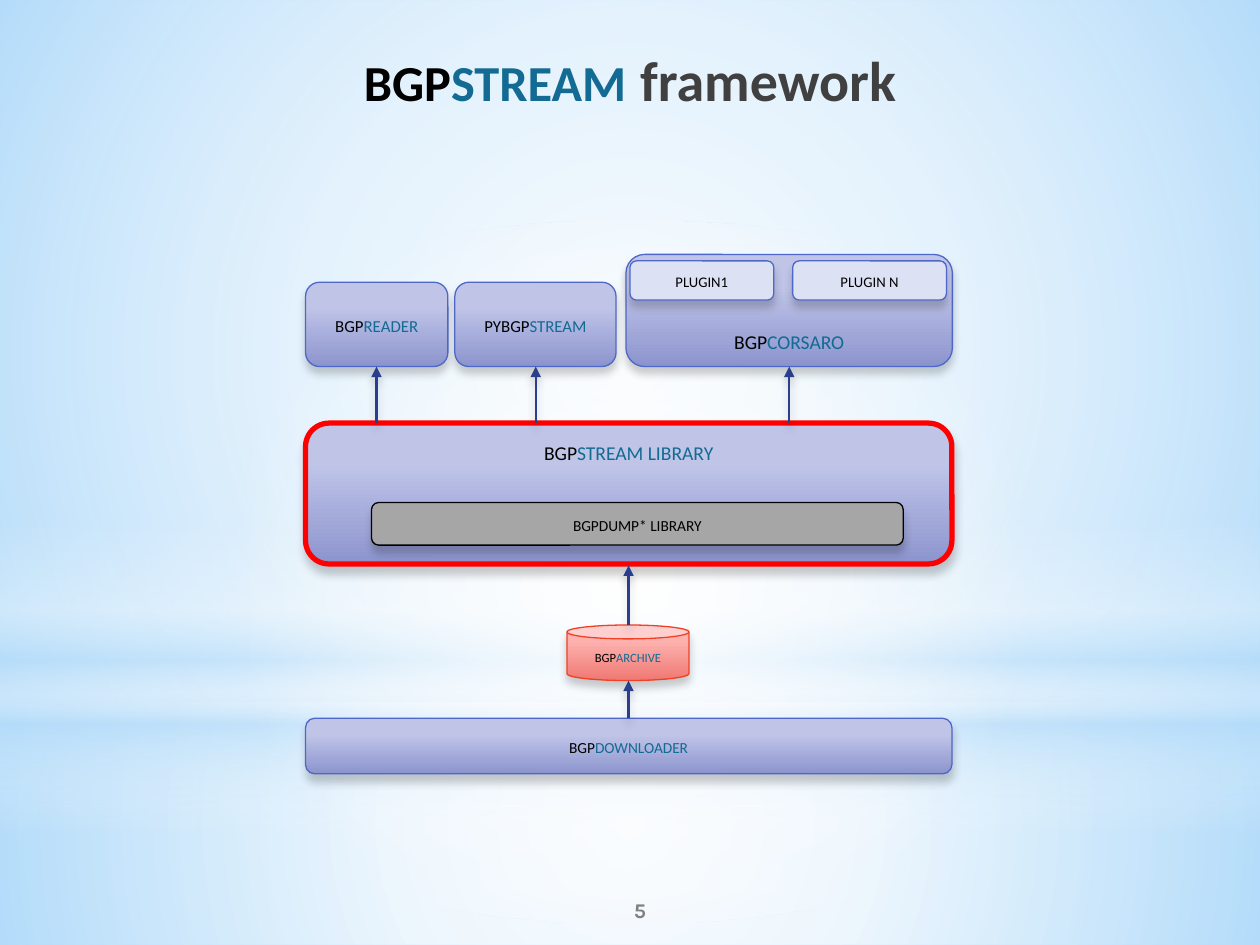
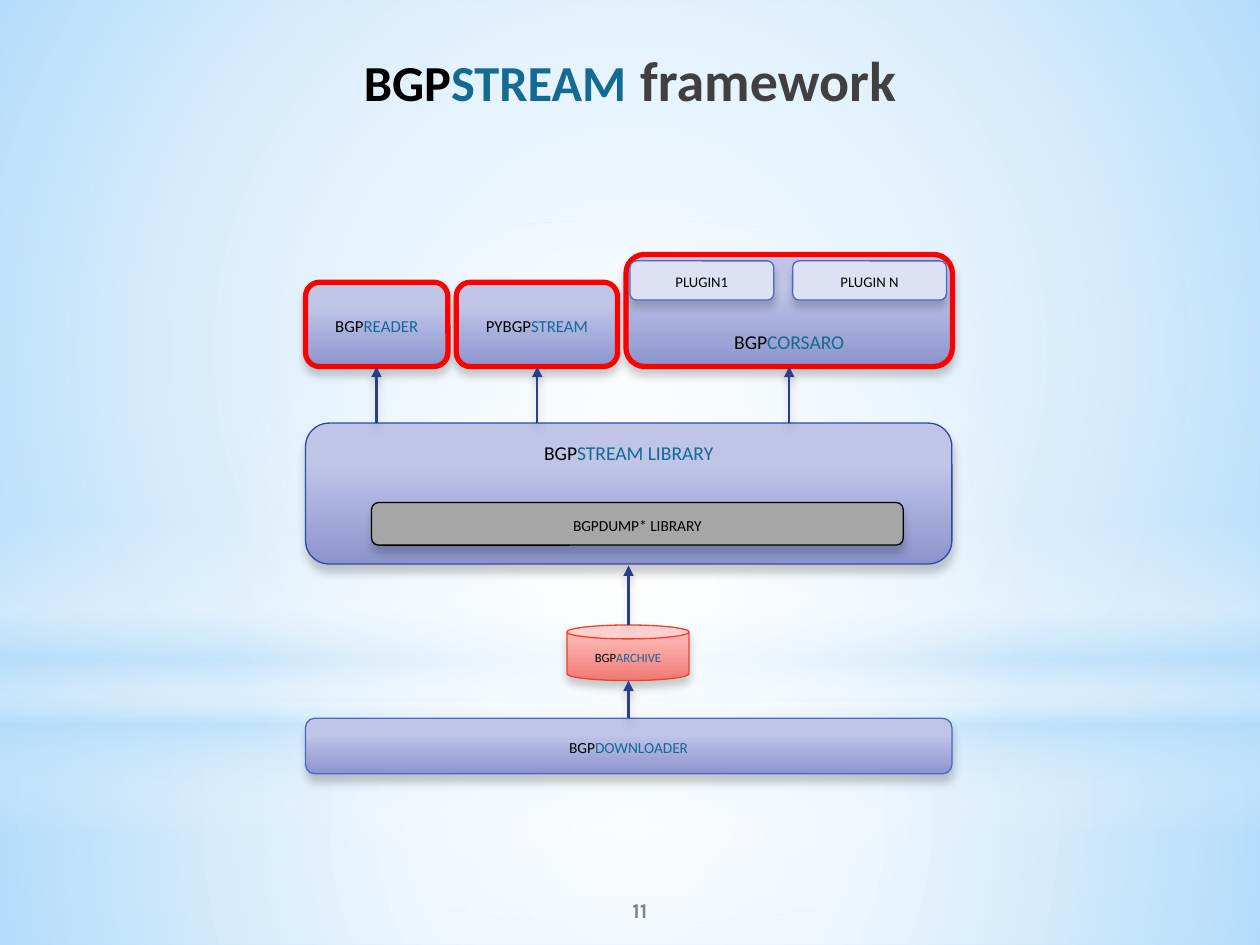
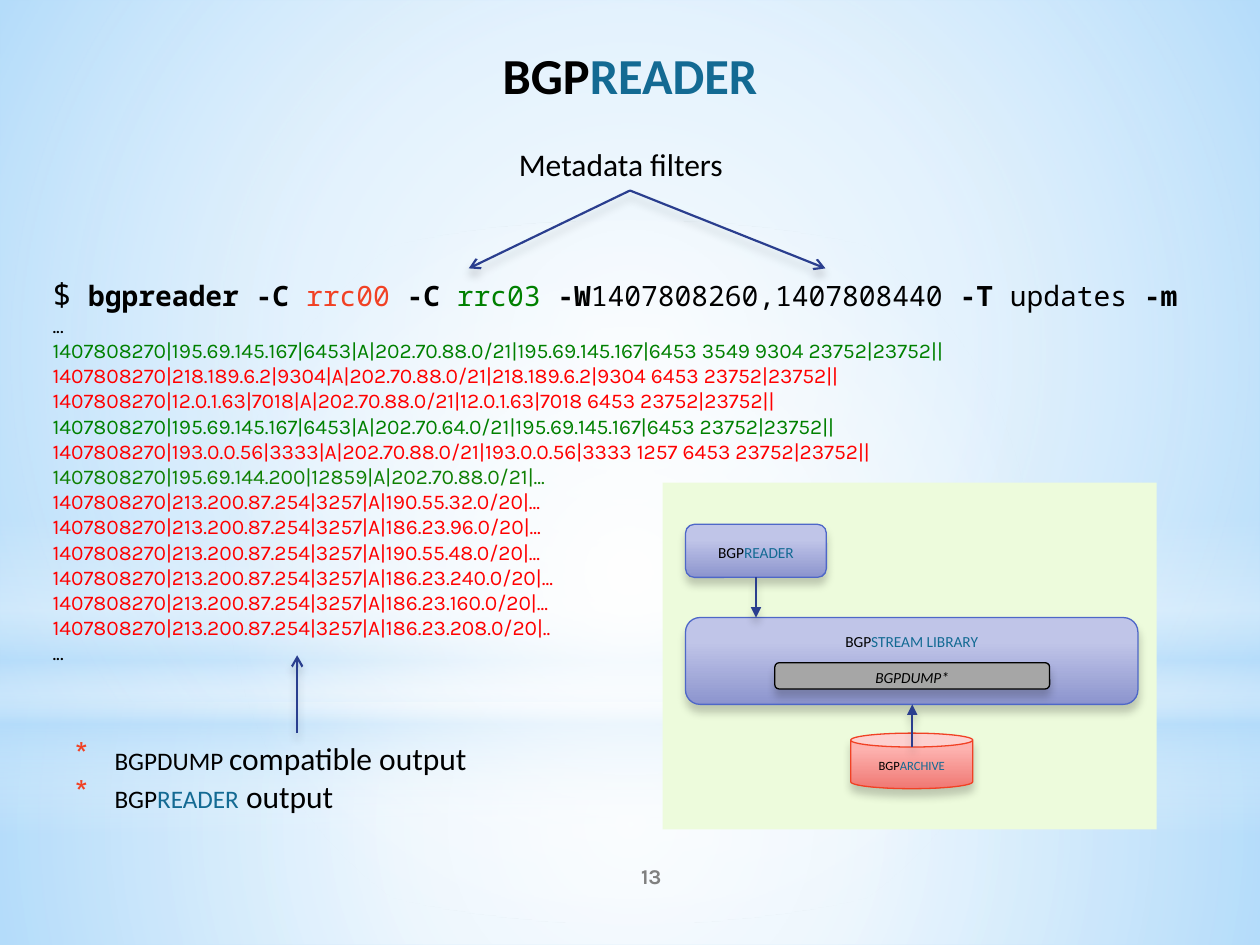
from dataclasses import dataclass
from lxml.etree import SubElement
from pptx import Presentation
from pptx.dml.color import RGBColor
from pptx.enum.shapes import MSO_CONNECTOR, MSO_SHAPE
from pptx.enum.text import MSO_ANCHOR, MSO_AUTO_SIZE, PP_ALIGN
from pptx.oxml import parse_xml
from pptx.oxml.ns import nsdecls, qn
from pptx.util import Cm, Pt


@dataclass(frozen=True)
class Theme:
    black: str = "000000"
    teal: str = "136A93"
    dark: str = "404040"
    gray: str = "808080"
    red: str = "FF0000"
    orange: str = "F14124"
    green: str = "008000"
    leaf: str = "0F8003"
    blue: str = "4E67C8"
    navy: str = "31489F"
    arrow: str = "2A3E8E"
    sky: str = "B4DCFA"
    white: str = "FFFFFF"
    steel: str = "A6A6A6"
    pale: str = "DCE1F4"
    lime: str = "EDFBDC"
    lilac: tuple = ((28, "C0C5E8", 100), (100, "8C94CE", 100))
    rose: tuple = ((28, "FDB2AF", 100), (100, "F07873", 100))
    sans: str = "Calibri"
    mono: str = "Noto Sans Mono"
    karla: str = "Karla"
    serif: str = "Vollkorn"
    head: float = 36
    wide: float = 40
    sub: float = 32
    big: float = 18
    code: float = 16
    large: float = 14
    mid: float = 12
    small: float = 11
    mini: float = 10.5
    tiny: float = 9


T = Theme()
SHADE = (f'<a:effectLst {nsdecls("a")}><a:outerShdw blurRad="63500" dist="50800" dir="5400000" '
         'algn="ctr" rotWithShape="0"><a:srgbClr val="000000"><a:alpha val="20000"/>'
         '</a:srgbClr></a:outerShdw></a:effectLst>')
ROUND, CAN, RECT = MSO_SHAPE.ROUNDED_RECTANGLE, MSO_SHAPE.CAN, MSO_SHAPE.RECTANGLE


def write(para, runs, size, font=T.sans):
    for text, color, flags, *more in runs:
        run = para.add_run()
        run.text = text
        run.font.size = Pt(more[0] if more else size)
        run.font.name = more[1] if len(more) > 1 else font
        run.font.color.rgb = RGBColor.from_string(color)
        run.font.bold = "b" in flags
        run.font.italic = "i" in flags
        if "s" in flags:
            run._r.get_or_add_rPr().set("cap", "small")


def node(shapes, kind, place, fill, edge=None, weight=0.75, words=(), size=T.small,
         anchor=MSO_ANCHOR.MIDDLE, flags="s", ring=False):
    shape = shapes.add_shape(kind, *map(Cm, place))
    props = shape.element.spPr
    if isinstance(fill, str):
        shape.fill.solid()
        shape.fill.fore_color.rgb = RGBColor.from_string(fill)
    else:
        stops = "".join(f'<a:gs pos="{at * 1000}"><a:srgbClr val="{color}">'
                        f'<a:alpha val="{alpha * 1000}"/></a:srgbClr></a:gs>'
                        for at, color, alpha in fill)
        way = ('<a:path path="circle"><a:fillToRect l="50000" t="50000" r="50000" b="50000"/>'
               '</a:path>' if ring else '<a:lin ang="5400000" scaled="0"/>')
        props.insert(2, parse_xml(f'<a:gradFill {nsdecls("a")} rotWithShape="1">'
                                  f'<a:gsLst>{stops}</a:gsLst>{way}</a:gradFill>'))
    if edge:
        shape.line.color.rgb = RGBColor.from_string(edge)
        shape.line.width = Pt(weight)
        props.append(parse_xml(SHADE))
    else:
        shape.line.fill.background()
        shape.shadow.inherit = False
    if words:
        frame = shape.text_frame
        frame.vertical_anchor = anchor
        frame.paragraphs[0].alignment = PP_ALIGN.CENTER
        runs = [(word, color, flags) for word, color in zip(words, (T.black, T.teal))]
        write(frame.paragraphs[0], runs, size)
    return shape


deck = Presentation()
deck.slide_width, deck.slide_height = Cm(25.4), Cm(19.05)
master = deck.slide_master
master.background.fill.solid()
master.background.fill.fore_color.rgb = RGBColor.from_string(T.sky)

frame_title = [("bgp", T.black, "bs"), ("stream", T.teal, "bs"),
               (" ", T.dark, "b", T.wide, T.serif), ("framework", T.dark, "b", T.sub)]
reader_title = [("bgp", T.black, "bs"), ("reader", T.teal, "bs")]
slides = []
for runs, number, left, top in [(frame_title, "5", 10.36, 17.83),
                                (frame_title, "11", 10.36, 17.83),
                                (reader_title, "13", 10.59, 17.15)]:
    slide = deck.slides.add_slide(deck.slide_layouts[5])
    slides.append(slide)
    title = slide.shapes.title
    title.left, title.top, title.width, title.height = map(Cm, (1.27, 0.43, 22.86, 1.47))
    frame = title.text_frame
    frame.auto_size = MSO_AUTO_SIZE.NONE
    frame.vertical_anchor = MSO_ANCHOR.TOP
    frame.margin_top = Cm(0.2)
    frame.paragraphs[0].alignment = PP_ALIGN.CENTER
    write(frame.paragraphs[0], runs, T.head)
    frame = slide.shapes.add_textbox(Cm(left), Cm(top), Cm(5.08), Cm(1.02)).text_frame
    frame.word_wrap = True
    frame.vertical_anchor = MSO_ANCHOR.MIDDLE
    frame.paragraphs[0].alignment = PP_ALIGN.CENTER
    write(frame.paragraphs[0], [(number, T.gray, "b")], T.mid, T.karla)

bands = [
    (RECT, (0, 14.17, 25.4, 4.88), True,
     [(0, T.white, 91), (37, T.white, 76), (100, T.sky, 79)]),
    (RECT, (0, 0, 25.4, 14.17), True,
     [(0, T.white, 89), (48, T.white, 62), (100, T.sky, 79)]),
    (RECT, (0, 10.46, 25.4, 6.35), False,
     [(0, T.white, 0), (29, T.white, 30), (45, T.sky, 40),
      (55, T.white, 26), (65, T.sky, 60), (100, T.white, 0)]),
    (MSO_SHAPE.OVAL, (0, 4.45, 25.4, 14.17), True, [(0, T.white, 100), (56, T.white, 0)]),
]
for spot, (kind, place, ring, stops) in enumerate(bands, 2):
    band = node(slides[0].shapes, kind, place, stops, ring=ring)
    master.shapes.element.insert(spot, band.element)

arrows = []
for slide, lib, tool, shift in [(slides[0], (T.red, 3), (T.blue, 0.75), 0),
                                (slides[1], (T.navy, 0.75), (T.red, 3), 0.03)]:
    shapes = slide.shapes
    node(shapes, ROUND, (6.16, 8.53, 13.03, 2.84), T.lilac, *lib,
         ("bgp", "stream library"), T.large, MSO_ANCHOR.TOP)
    node(shapes, ROUND, (12.62, 5.13, 6.58, 2.26), T.lilac, *tool,
         ("bgp", "corsaro"), T.large, MSO_ANCHOR.BOTTOM)
    node(shapes, ROUND, (6.16, 5.69, 2.87, 1.7), T.lilac, *tool, ("bgp", "reader"), T.mid)
    node(shapes, ROUND, (9.17 + shift, 5.69, 3.25, 1.7), T.lilac, *tool,
         ("pybgp", "stream"), T.mid)
    node(shapes, ROUND, (7.49, 10.13, 10.72, 0.86), T.steel, T.black,
         words=("bgpdump* library",))
    for left, width, name in [(15.98, 3.1, "plugin n"), (12.7, 2.9, "plugin1")]:
        node(shapes, ROUND, (left, 5.26, width, 0.79), T.pale, T.blue,
             words=(name,), size=T.mini)
    node(shapes, ROUND, (6.16, 14.48, 13.03, 1.12), T.lilac, T.blue,
         words=("bgp", "downloader"))
    node(shapes, CAN, (11.43, 12.6, 2.46, 1.12), T.rose, T.orange,
         words=("bgp", "archive"), size=T.tiny)
    for x, start, end in [(15.91, 8.53, 7.39), (7.59, 8.53, 7.39), (10.8 + shift, 8.53, 7.39),
                          (12.67, 14.48, 13.72), (12.67, 12.6, 11.4)]:
        arrows.append((shapes, (x, start, x, end), "triangle"))

shapes = slides[2].shapes
command = [("$", T.black, "", T.big), (" ", T.black, ""), ("bgpreader -C ", T.black, "b"),
           ("rrc00 ", T.orange, ""), ("-C ", T.black, "b"), ("rrc03 ", T.green, ""),
           ("-W", T.black, "b"), ("1407808260,1407808440 ", T.black, ""),
           ("-T", T.black, "b"), (" updates ", T.black, ""), ("-m", T.black, "b")]
output = [
    ("...", T.black),
    ("1407808270|195.69.145.167|6453|A|202.70.88.0/21|195.69.145.167|"
     "6453 3549 9304 23752|23752||", T.green),
    ("1407808270|218.189.6.2|9304|A|202.70.88.0/21|218.189.6.2|9304 6453 23752|23752||", T.red),
    ("1407808270|12.0.1.63|7018|A|202.70.88.0/21|12.0.1.63|7018 6453 23752|23752||", T.red),
    ("1407808270|195.69.145.167|6453|A|202.70.64.0/21|195.69.145.167|6453 23752|23752||", T.green),
    ("1407808270|193.0.0.56|3333|A|202.70.88.0/21|193.0.0.56|3333 1257 6453 23752|23752||", T.red),
    ("1407808270|195.69.144.200|12859|A|202.70.88.0/21|...", T.leaf),
]
for tail in ["190.55.32.0/20|...", "186.23.96.0/20|...", "190.55.48.0/20|...",
             "186.23.240.0/20|...", "186.23.160.0/20|...", "186.23.208.0/20|.."]:
    output.append((f"1407808270|213.200.87.254|3257|A|{tail}", T.red))
output.append(("...", T.black))

frame = shapes.add_textbox(Cm(0.81), Cm(5.41), Cm(23.95), Cm(8.2)).text_frame
frame.word_wrap = False
write(frame.paragraphs[0], command, T.code, T.mono)
for text, color in output:
    write(frame.add_paragraph(), [(text, color, "")], T.mid, T.karla)

frame = shapes.add_textbox(Cm(10.21), Cm(2.79), Cm(4.98), Cm(1.02)).text_frame
frame.word_wrap = False
write(frame.paragraphs[0], [("Metadata filters", T.black, "")], T.big)

frame = shapes.add_textbox(Cm(1.27), Cm(14.78), Cm(9.45), Cm(1.8)).text_frame
frame.word_wrap = False
notes = [[("bgpdump ", T.black, "s"), ("compatible output", T.black, "")],
         [("bgp", T.black, "s"), ("reader", T.teal, "s"), (" output", T.black, "")]]
for para, runs in zip((frame.paragraphs[0], frame.add_paragraph()), notes):
    props = para._p.get_or_add_pPr()
    props.set("marL", str(Cm(0.79)))
    props.set("indent", str(-Cm(0.79)))
    SubElement(SubElement(props, qn("a:buClr")), qn("a:srgbClr"), val=T.orange)
    SubElement(props, qn("a:buChar"), char="*")
    write(para, runs, T.big)

for line in [(12.7, 3.84, 9.45, 5.41), (12.7, 3.84, 16.64, 5.41), (5.99, 14.78, 5.99, 13.21)]:
    arrows.append((shapes, line, "arrow"))

group = shapes.add_group_shape().shapes
node(group, RECT, (13.36, 9.73, 9.96, 6.99), T.lime)
node(group, ROUND, (13.82, 12.45, 9.12, 1.75), T.lilac, T.blue,
     words=("bgp", "stream library"), anchor=MSO_ANCHOR.TOP)
node(group, ROUND, (13.82, 10.57, 2.84, 1.07), T.lilac, T.blue, words=("bgp", "reader"))
node(group, ROUND, (15.62, 13.36, 5.54, 0.53), T.steel, T.black,
     words=("bgpdump*",), flags="is")
node(group, CAN, (17.15, 14.78, 2.46, 1.12), T.rose, T.orange,
     words=("bgp", "archive"), size=T.tiny)
for line in [(15.24, 11.63, 15.24, 12.45), (18.39, 15.06, 18.39, 14.2)]:
    arrows.append((group, line, "triangle"))

for shapes, line, tip in arrows:
    link = shapes.add_connector(MSO_CONNECTOR.STRAIGHT, *map(Cm, line))
    link.line.color.rgb = RGBColor.from_string(T.arrow)
    link.line.width = Pt(1.25)
    SubElement(link.line._get_or_add_ln(), qn("a:tailEnd"), type=tip)
    link.element.spPr.append(parse_xml(SHADE))

deck.save("out.pptx")
